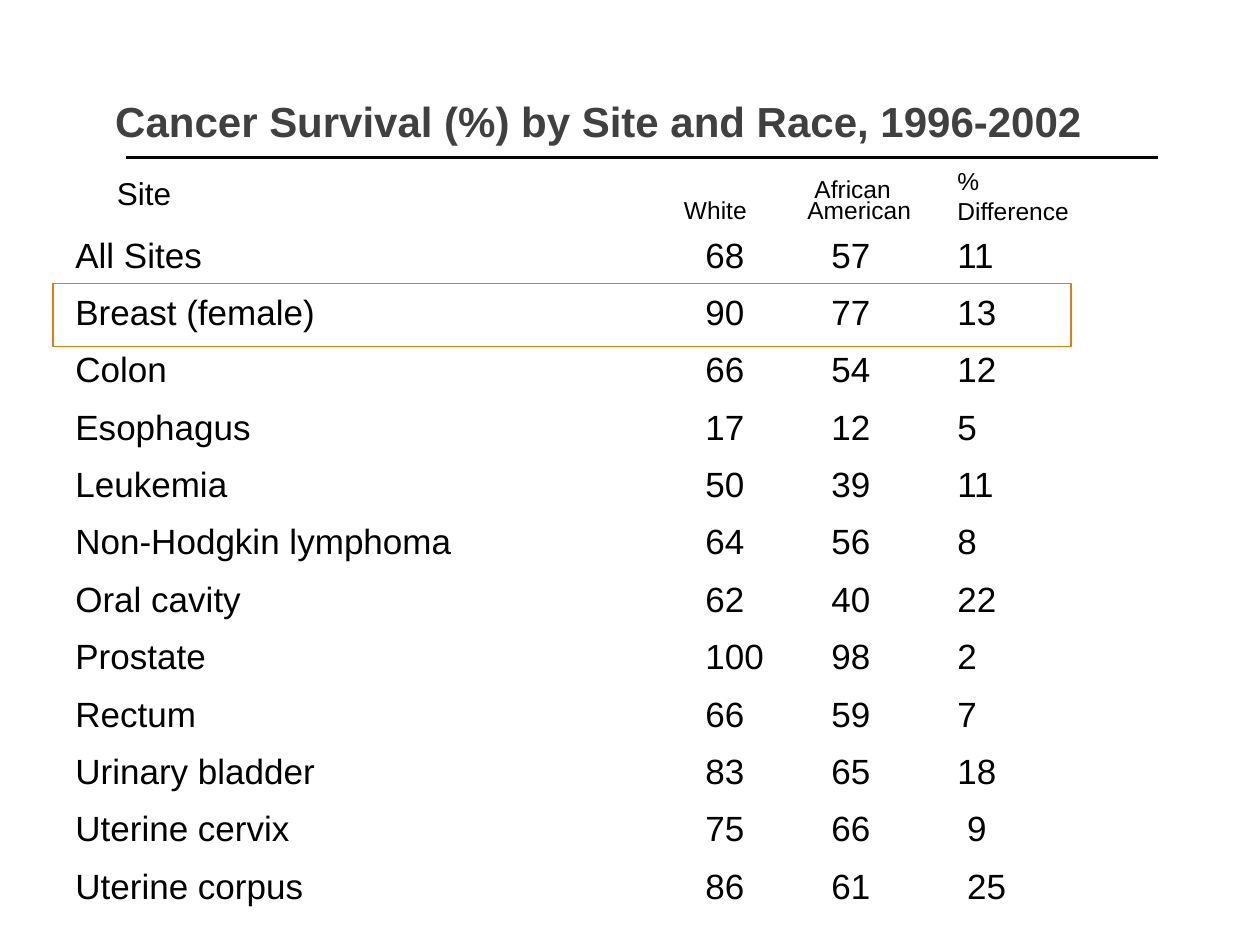
from lxml import etree
from pptx import Presentation
from pptx import util as u
from pptx.dml.color import RGBColor
from pptx.enum import shapes, text
from pptx.oxml import ns

FONT = "Arial"
BLACK = "000000"
SURVIVAL_ROWS = [
    ("All Sites", "68", "57", "11"),
    ("Breast (female)", "90", "77", "13"),
    ("Colon", "66", "54", "12"),
    ("Esophagus", "17", "12", "5"),
    ("Leukemia", "50", "39", "11"),
    ("Non-Hodgkin lymphoma", "64", "56", "8"),
    ("Oral cavity", "62", "40", "22"),
    ("Prostate", "100", "98", "2"),
    ("Rectum", "66", "59", "7"),
    ("Urinary bladder", "83", "65", "18"),
    ("Uterine cervix", "75", "66", " 9"),
    ("Uterine corpus", "86", "61", " 25"),
]


def color(value):
    """Turn a hex string into a colour."""
    return RGBColor.from_string(value)


def place(shape, left, top, width, height):
    """Set the position and size of a shape in inches."""
    shape.left, shape.top = u.Inches(left), u.Inches(top)
    shape.width, shape.height = u.Inches(width), u.Inches(height)


def add_tab_stops(paragraph, stops):
    """Give a paragraph left tab stops, in inches."""
    properties = paragraph._p.get_or_add_pPr()
    tab_list = etree.SubElement(properties, ns.qn("a:tabLst"))
    for stop in stops:
        etree.SubElement(tab_list, ns.qn("a:tab"), pos=str(u.Inches(stop)), algn="l")


def write_text(frame, lines, size, bold=False, fill=BLACK, align=text.PP_ALIGN.LEFT,
               anchor=text.MSO_ANCHOR.TOP, spacing=None, gap=0, stops=()):
    """Write lines as formatted paragraphs in a text frame."""
    frame.word_wrap = True
    frame.auto_size = text.MSO_AUTO_SIZE.NONE
    frame.vertical_anchor = anchor
    for index, line in enumerate(lines):
        paragraph = frame.add_paragraph() if index else frame.paragraphs[0]
        paragraph.text = line
        paragraph.alignment = align
        paragraph.space_before = u.Pt(gap if index else 0)
        if spacing:
            paragraph.line_spacing = spacing
        if stops:
            add_tab_stops(paragraph, stops)
        font = paragraph.font
        font.name, font.size, font.bold = FONT, u.Pt(size), bold
        font.color.rgb = color(fill)


def add_text(slide, lines, left, top, width, height, **formatting):
    """Add a text box with formatted lines."""
    box = slide.shapes.add_textbox(0, 0, 0, 0)
    place(box, left, top, width, height)
    write_text(box.text_frame, lines, **formatting)


def add_title(slide, left, top, width, height):
    """Fill the title placeholder and rule it off below."""
    title = slide.shapes.title
    place(title, left, top, width, height)
    write_text(title.text_frame, ["Cancer Survival (%) by Site and Race, 1996-2002"],
               size=24, bold=True, fill="404040", align=text.PP_ALIGN.CENTER,
               anchor=text.MSO_ANCHOR.MIDDLE, spacing=u.Pt(52))
    rule_y = u.Inches(top + 1.08)
    rule = slide.shapes.add_connector(shapes.MSO_CONNECTOR.STRAIGHT,
                                      u.Inches(left + 1), rule_y,
                                      u.Inches(left + 9.19), rule_y)
    rule.line.color.rgb = color(BLACK)
    rule.line.width = u.Pt(2.25)
    etree.SubElement(rule._element.spPr, ns.qn("a:effectLst"))


def add_headings(slide, left, top):
    """Add the column headings relative to the corner of their band."""
    right = text.PP_ALIGN.RIGHT
    headings = [
        (["Site"], 0, 0.06, 0.83, 0.4, 18, None),
        (["White"], 4.5, 0.23, 1.08, 0.33, 14, None),
        (["African"], 5.34, 0.06, 1, 0.33, 14, right),
        (["American"], 5.17, 0.23, 1.33, 0.33, 14, right),
        (["%", "Difference"], 6.67, 0, 1.75, 0.57, 14, None),
    ]
    for lines, x, y, width, height, size, align in headings:
        add_text(slide, lines, left + x, top + y, width, height, size=size, align=align)


def add_survival_rows(slide, left, top, width, height):
    """List survival by site in tabbed columns and frame the breast cancer row."""
    lines = ["\t".join(row) for row in SURVIVAL_ROWS]
    add_text(slide, lines, left, top, width, height, size=20, spacing=1.15,
             gap=5.2, stops=(5, 6, 7))
    highlight = slide.shapes.add_shape(shapes.MSO_SHAPE.RECTANGLE, 0, 0, 0, 0)
    place(highlight, left - 0.08, top + 0.5, 8.08, 0.5)
    highlight.shadow.inherit = False
    highlight.fill.background()
    highlight.line.color.rgb = color("DD7E0E")
    highlight.line.width = u.Pt(0.75)


def main():
    """Build and save the cancer survival slide."""
    presentation = Presentation()
    presentation.slide_width, presentation.slide_height = u.Inches(10), u.Inches(7.5)
    slide = presentation.slides.add_slide(presentation.slide_layouts[5])
    slide.background.fill.solid()
    slide.background.fill.fore_color.rgb = color("FFFFFF")
    add_title(slide, 0, 0.17, 9.5, 1.25)
    add_headings(slide, 0.83, 1.27)
    add_survival_rows(slide, 0.5, 1.75, 9, 5.61)
    presentation.save("out.pptx")


if __name__ == "__main__":
    main()
